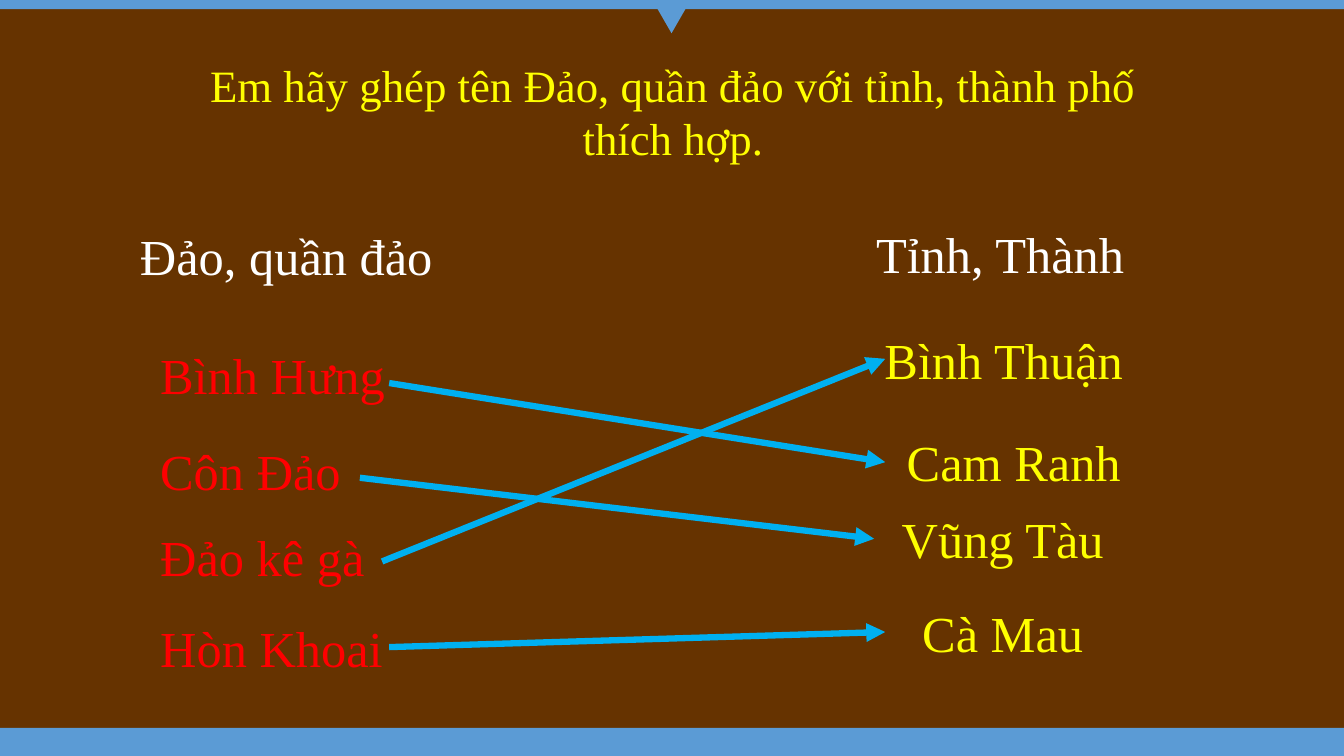
"""Build the slide that matches islands with their provinces."""
from dataclasses import dataclass

from lxml import etree
from pptx import Presentation
from pptx.dml.color import RGBColor
from pptx.enum.shapes import MSO_CONNECTOR, MSO_SHAPE
from pptx.enum.text import MSO_AUTO_SIZE, PP_ALIGN
from pptx.oxml.ns import qn
from pptx.util import Inches, Pt

LEFT, CENTER = PP_ALIGN.LEFT, PP_ALIGN.CENTER
RECT, TRIANGLE = MSO_SHAPE.RECTANGLE, MSO_SHAPE.ISOSCELES_TRIANGLE
STRAIGHT = MSO_CONNECTOR.STRAIGHT
GROW = MSO_AUTO_SIZE.SHAPE_TO_FIT_TEXT
LEFT_SIDE = 1


@dataclass(frozen=True)
class Theme:
    font: str = "Times New Roman"
    title_size: int = 32
    label_size: int = 36
    arrow_width: float = 4.5
    background: RGBColor = RGBColor(0x66, 0x33, 0x00)
    band: RGBColor = RGBColor(0x5B, 0x9B, 0xD5)
    yellow: RGBColor = RGBColor(0xFF, 0xFF, 0x00)
    red: RGBColor = RGBColor(0xFF, 0x00, 0x00)
    white: RGBColor = RGBColor(0xFF, 0xFF, 0xFF)
    arrow: RGBColor = RGBColor(0x00, 0xB0, 0xF0)


theme = Theme()


def add_label(s, text, x, y, w, color, align=LEFT, h=0.71, size=theme.label_size):
    """Add a wrapped one-run text box and return it."""
    sp = s.shapes.add_textbox(Inches(x), Inches(y), Inches(w), Inches(h))
    tf = sp.text_frame
    tf.word_wrap = True
    tf.auto_size = GROW
    p = tf.paragraphs[0]
    p.alignment = align
    r = p.add_run()
    r.text = text
    r.font.name = theme.font
    r.font.size = Pt(size)
    r.font.color.rgb = color
    return sp


prs = Presentation()
prs.slide_width, prs.slide_height = Inches(13.33), Inches(7.5)
s = prs.slides.add_slide(prs.slide_layouts[6])
s.background.fill.solid()
s.background.fill.fore_color.rgb = theme.background

for kind, x, y, w, h, angle in [
    (RECT, 0, 7.22, 13.33, 0.28, 0),
    (RECT, 0, 0, 13.33, 0.09, 0),
    (TRIANGLE, 6.47, 0, 0.38, 0.33, 180),
]:
    sp = s.shapes.add_shape(kind, Inches(x), Inches(y), Inches(w), Inches(h))
    sp.rotation = angle
    sp.shadow.inherit = False
    sp.fill.solid()
    sp.fill.fore_color.rgb = theme.band
    sp.line.fill.background()

add_label(s, "Em hãy ghép tên Đảo, quần đảo với tỉnh, thành phố thích hợp.",
          1.61, 0.52, 10.13, theme.yellow, CENTER, 1.18, theme.title_size)
add_label(s, "Đảo, quần đảo", 1.29, 2.18, 3.27, theme.white)
add_label(s, "Tỉnh, Thành", 8.59, 2.16, 3.08, theme.white)

for island, y in [("Bình Hưng", 3.36), ("Côn Đảo", 4.32),
                  ("Đảo kê gà", 5.17), ("Hòn Khoai", 6.07)]:
    add_label(s, island, 1.49, y, 2.55, theme.red)

provinces = {}
for province, x, y, w in [("Bình Thuận", 8.59, 3.22, 2.73), ("Cam Ranh", 8.78, 4.23, 2.55),
                          ("Vũng Tàu", 8.67, 4.99, 2.55), ("Cà Mau", 8.67, 5.92, 2.55)]:
    provinces[province] = add_label(s, province, x, y, w, theme.yellow, CENTER)

for x1, y1, x2, y2, joined in [
    (3.86, 3.8, 8.78, 4.58, "Cam Ranh"),
    (3.57, 4.74, 8.67, 5.35, "Vũng Tàu"),
    (3.79, 5.57, 8.78, 3.56, None),
    (3.86, 6.42, 8.78, 6.27, None),
]:
    arrow = s.shapes.add_connector(STRAIGHT, Inches(x1), Inches(y1), Inches(x2), Inches(y2))
    if joined:
        arrow.end_connect(provinces[joined], LEFT_SIDE)
    arrow.line.color.rgb = theme.arrow
    arrow.line.width = Pt(theme.arrow_width)
    etree.SubElement(arrow.line._get_or_add_ln(), qn("a:tailEnd"), type="triangle")
    etree.SubElement(arrow._element.spPr, qn("a:effectLst"))

prs.save("out.pptx")
